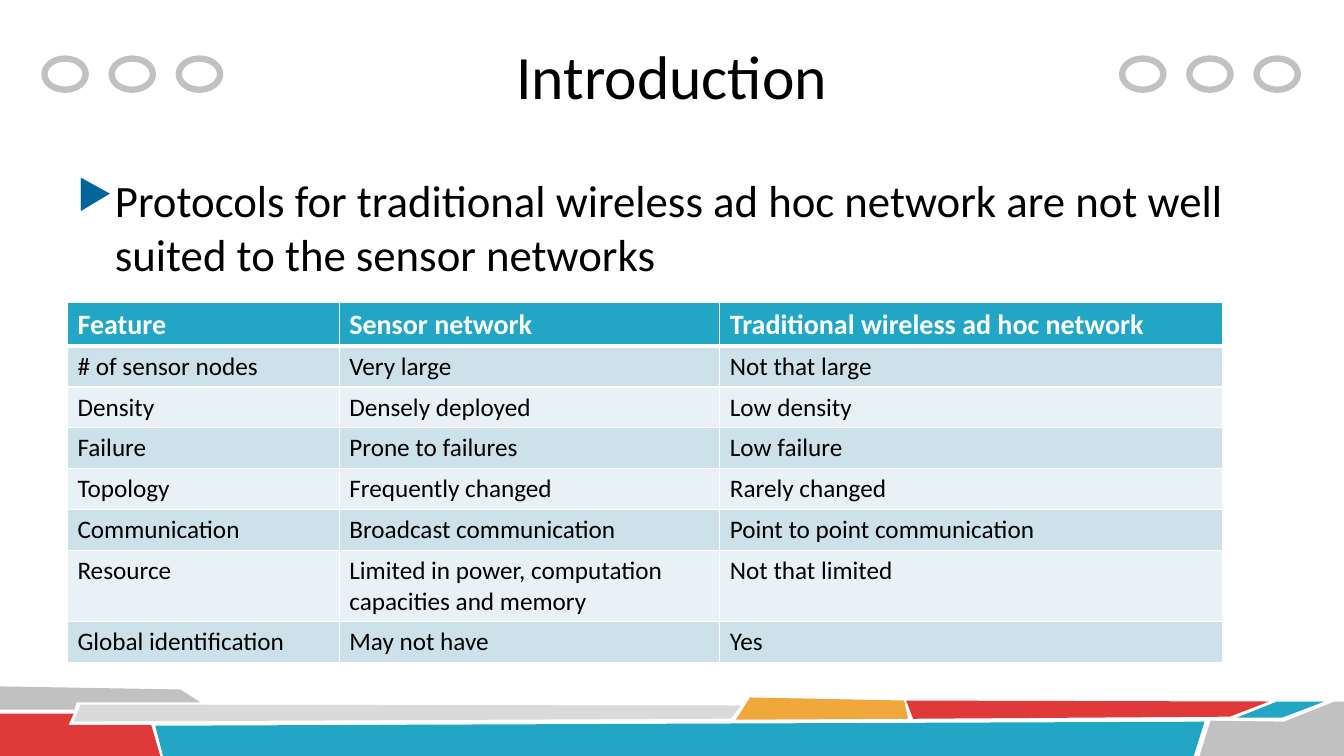
import pptx
import pptx.dml.color
import pptx.enum.shapes
import pptx.enum.text
import pptx.oxml
import pptx.oxml.ns
import pptx.util
from lxml import etree

Pt = pptx.util.Pt
ALIGN = pptx.enum.text.PP_ALIGN
ANCHOR = pptx.enum.text.MSO_ANCHOR
BLACK, WHITE = "000000", "FFFFFF"
GREY, PALE, RED, TEAL, AMBER = "C1C1C1", "DADADA", "DF3939", "21A6C5", "F0A73C"
BANDS = ["CDE1EA", "E8F1F5"]

FOOTER = [
    (GREY, [(0, 490.3), (128.9, 492.5), (143.3, 501.8), (54.7, 501.8), (53.3, 506.9), (0, 506.9)]),
    (RED, [(0, 509.8), (52.6, 509.8), (49, 517.7), (108, 517.7), (114.5, 540), (0, 540)]),
    (PALE, [(57.6, 503.3), (529.2, 504), (522, 513.4), (52.6, 515.5)]),
    (TEAL, [(110.9, 518.4), (860.4, 515.5), (852.5, 540.5), (116.6, 540.5)]),
    (AMBER, [(535.7, 498.2), (645.8, 500.4), (648.7, 513.4), (525.6, 514.1)]),
    (RED, [(647.3, 500.4), (906.5, 501.1), (878.4, 511.9), (652.3, 513.4)]),
    (TEAL, [(912.2, 501.1), (946.1, 501.1), (915.8, 512.6), (883.4, 512.6)]),
    (GREY, [(864.7, 514.8), (917.3, 515.5), (953.3, 501.1), (960, 501.1), (960, 540), (856.8, 540)]),
]

FEATURES = [
    ("Feature", "Sensor network", "Traditional wireless ad hoc network"),
    ("# of sensor nodes", "Very large", "Not that large"),
    ("Density", "Densely deployed", "Low density"),
    ("Failure", "Prone to failures", "Low failure"),
    ("Topology", "Frequently changed", "Rarely changed"),
    ("Communication", "Broadcast communication", "Point to point communication"),
    ("Resource", "Limited in power, computation capacities and memory", "Not that limited"),
    ("Global identification", "May not have", "Yes"),
]


def rgb(color):
    return pptx.dml.color.RGBColor.from_string(color)


class Deck:
    """Holds the text style and the current slide, and adds elements to it."""

    def __init__(self, prs, font):
        self.font = font
        self.s = prs.slides.add_slide(prs.slide_layouts[6])

    def run(self, p, text, size, color=BLACK, bold=False):
        r = p.add_run()
        r.text = text
        r.font.name = self.font
        r.font.size = Pt(size)
        r.font.bold = bold
        r.font.color.rgb = rgb(color)

    def polygon(self, color, points):
        start, *rest = [(Pt(x), Pt(y)) for x, y in points]
        fb = self.s.shapes.build_freeform(*start)
        fb.add_line_segments(rest, close=True)
        sp = fb.convert_to_shape()
        sp.shadow.inherit = False
        sp.fill.solid()
        sp.fill.fore_color.rgb = rgb(color)
        sp.line.fill.background()

    def ring(self, x, y, w, h):
        oval = pptx.enum.shapes.MSO_SHAPE.OVAL
        sp = self.s.shapes.add_shape(oval, Pt(x), Pt(y), Pt(w), Pt(h))
        sp.shadow.inherit = False
        sp.fill.background()
        sp.line.color.rgb = rgb(GREY)
        sp.line.width = Pt(4.5)

    def text(self, x, y, w, h, text, size, align=ALIGN.LEFT, anchor=ANCHOR.TOP):
        tf = self.s.shapes.add_textbox(Pt(x), Pt(y), Pt(w), Pt(h)).text_frame
        tf.word_wrap = True
        tf.vertical_anchor = anchor
        p = tf.paragraphs[0]
        p.alignment = align
        self.run(p, text, size)
        return p

    def bullet(self, p, char, color, percent, indent):
        p.space_before = Pt(6.4)
        pPr = p._p.get_or_add_pPr()
        pPr.set("marL", str(Pt(indent)))
        pPr.set("indent", str(-Pt(indent)))
        qn = pptx.oxml.ns.qn
        clr = etree.SubElement(pPr, qn("a:buClr"))
        etree.SubElement(clr, qn("a:srgbClr"), val=color)
        etree.SubElement(pPr, qn("a:buSzPct"), val=str(percent * 1000))
        etree.SubElement(pPr, qn("a:buChar"), char=char)

    def border(self, cell, side, width):
        qn = pptx.oxml.ns.qn
        tcPr = cell._tc.get_or_add_tcPr()
        ln = etree.SubElement(tcPr, qn("a:ln" + side), w=str(Pt(width)))
        fill = etree.SubElement(ln, qn("a:solidFill"))
        etree.SubElement(fill, qn("a:srgbClr"), val=WHITE)

    def table(self, x, y, widths, heights, rows):
        frame = self.s.shapes.add_table(
            len(rows), len(widths), Pt(x), Pt(y), Pt(sum(widths)), Pt(sum(heights)))
        tbl = frame.table
        tbl.horz_banding = False
        for col, width in zip(tbl.columns, widths):
            col.width = Pt(width)
        for i, values in enumerate(rows):
            tbl.rows[i].height = Pt(heights[i])
            header = i == 0
            for j, value in enumerate(values):
                cell = tbl.cell(i, j)
                for side in "LRTB":
                    thick = (i, side) in [(0, "B"), (1, "T")]
                    self.border(cell, side, 3 if thick else 1)
                cell.fill.solid()
                cell.fill.fore_color.rgb = rgb(TEAL if header else BANDS[(i - 1) % 2])
                self.run(cell.text_frame.paragraphs[0], value, 20 if header else 18,
                         WHITE if header else BLACK, header)


def main():
    prs = pptx.Presentation()
    prs.slide_width, prs.slide_height = Pt(960), Pt(540)
    deck = Deck(prs, "Calibri")
    for color, points in FOOTER:
        deck.polygon(color, points)
    for left in (31.7, 801.5):
        for i in range(3):
            deck.ring(left + 48 * i, 41.8, 29.5, 22.3)
    deck.text(168, 8.6, 624, 90, "Introduction", 44, ALIGN.CENTER, ANCHOR.MIDDLE)
    p = deck.text(48, 120, 864, 362, "Protocols for traditional wireless ad hoc network "
                  "are not well suited to the sensor networks", 32)
    deck.bullet(p, "▶", "006699", 90, 27)
    heights = [31] + [29.2] * 5 + [51, 29.2]
    deck.table(48.2, 216, [194.2, 271.8, 359.2], heights, FEATURES)
    prs.save("out.pptx")


if __name__ == "__main__":
    main()
